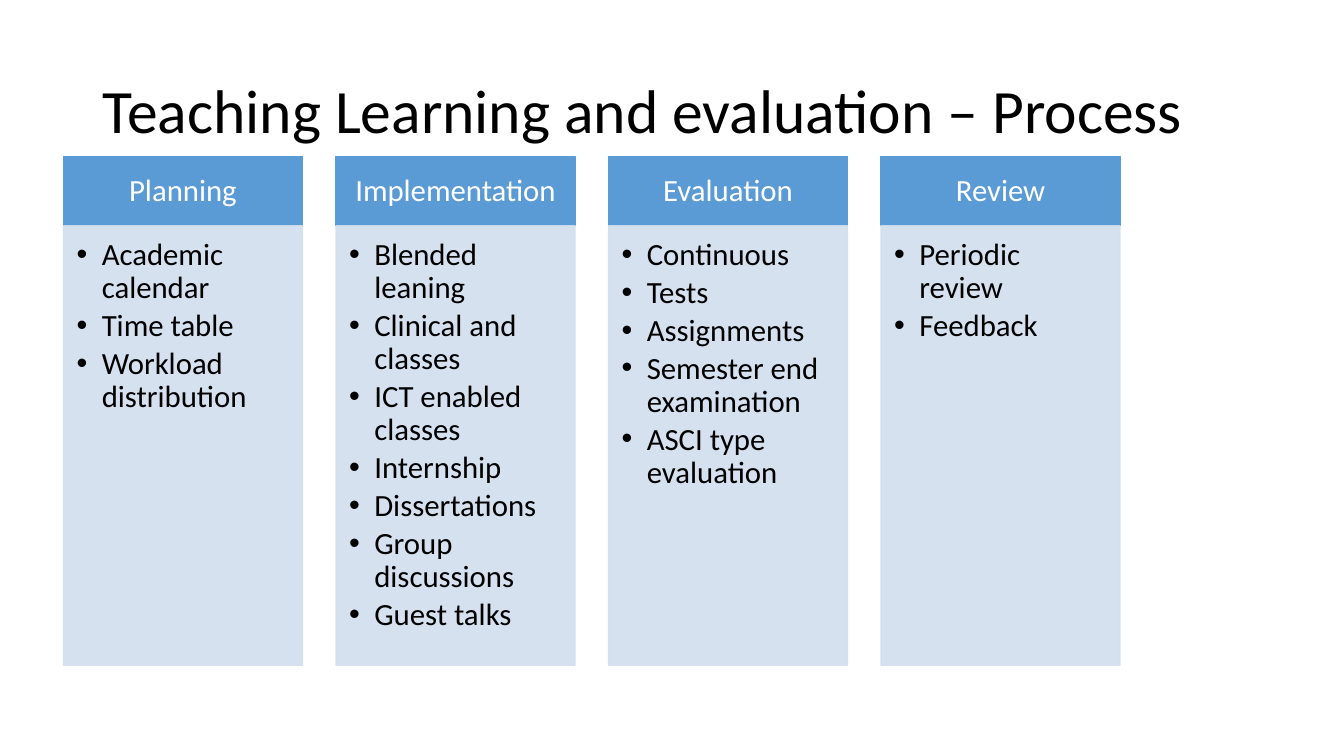
from dataclasses import dataclass

from lxml import etree
from pptx import Presentation
from pptx.dml.color import RGBColor
from pptx.enum.shapes import MSO_SHAPE
from pptx.enum.text import MSO_ANCHOR, PP_ALIGN
from pptx.oxml.ns import qn
from pptx.util import Inches, Pt

RECT = MSO_SHAPE.RECTANGLE
TOP, MIDDLE = MSO_ANCHOR.TOP, MSO_ANCHOR.MIDDLE
LEFT, CENTER = PP_ALIGN.LEFT, PP_ALIGN.CENTER


@dataclass(frozen=True)
class Theme:
    font: str = "Calibri"
    title_size: int = 44
    body_size: int = 22
    text: str = "000000"
    header_text: str = "FFFFFF"
    header_fill: str = "5B9BD5"
    body_fill: str = "D2DEEF"
    body_opacity: int = 90


@dataclass(frozen=True)
class Stage:
    name: str
    items: tuple[str, ...]


THEME = Theme()
TITLE = "Teaching Learning and evaluation – Process"
STAGES = (
    Stage("Planning", ("Academic calendar", "Time table", "Workload distribution")),
    Stage("Implementation", (
        "Blended leaning", "Clinical and classes", "ICT enabled classes", "Internship",
        "Dissertations", "Group discussions", "Guest talks",
    )),
    Stage("Evaluation", (
        "Continuous", "Tests", "Assignments", "Semester end examination",
        "ASCI type evaluation",
    )),
    Stage("Review", ("Periodic review", "Feedback")),
)
COLUMN_LEFT, COLUMN_PITCH, COLUMN_WIDTH = 0.63, 2.703, 2.37
HEADER_TOP, HEADER_HEIGHT, BODY_HEIGHT = 1.55, 0.69, 4.36


def set_frame(tf, anchor, insets: tuple[float, float, float, float]) -> None:
    tf.word_wrap = True
    tf.vertical_anchor = anchor
    left, top, right, bottom = map(Inches, insets)
    tf.margin_left, tf.margin_top = left, top
    tf.margin_right, tf.margin_bottom = right, bottom


def write(p, text: str, size: int, color: str, align=LEFT) -> None:
    p.alignment = align
    p.line_spacing = 0.9
    r = p.add_run()
    r.text = text
    r.font.name = THEME.font
    r.font.size = Pt(size)
    r.font.color.rgb = RGBColor.from_string(color)


def add_bullet(p) -> None:
    p.level = 1
    p.space_after = Pt(3.3)
    pPr = p._p.get_or_add_pPr()
    pPr.set("marL", str(Inches(0.25)))
    pPr.set("indent", str(-Inches(0.25)))
    etree.SubElement(pPr, qn("a:buFont"), typeface="Arial")
    etree.SubElement(pPr, qn("a:buChar"), char="•")


def add_box(slide, left: float, top: float, height: float, color: str, opacity: int = 100):
    sp = slide.shapes.add_shape(
        RECT, Inches(left), Inches(top), Inches(COLUMN_WIDTH), Inches(height))
    sp.shadow.inherit = False
    sp.fill.solid()
    sp.fill.fore_color.rgb = RGBColor.from_string(color)
    sp.line.color.rgb = RGBColor.from_string(color)
    sp.line.width = Pt(1)
    if opacity < 100:
        for clr in sp._element.spPr.iter(qn("a:srgbClr")):
            etree.SubElement(clr, qn("a:alpha"), val=str(opacity * 1000))
    return sp


def add_stage(slide, stage: Stage, left: float) -> None:
    header = add_box(slide, left, HEADER_TOP, HEADER_HEIGHT, THEME.header_fill)
    tf = header.text_frame
    set_frame(tf, MIDDLE, (0.17, 0.1, 0.17, 0.1))
    write(tf.paragraphs[0], stage.name, THEME.body_size, THEME.header_text, CENTER)

    body = add_box(slide, left, HEADER_TOP + HEADER_HEIGHT, BODY_HEIGHT,
                   THEME.body_fill, THEME.body_opacity)
    tf = body.text_frame
    set_frame(tf, TOP, (0.13, 0.13, 0.17, 0.19))
    for i, item in enumerate(stage.items):
        p = tf.add_paragraph() if i else tf.paragraphs[0]
        write(p, item, THEME.body_size, THEME.text)
        add_bullet(p)


def add_title(slide) -> None:
    box = slide.shapes.add_textbox(Inches(0.92), Inches(0.4), Inches(11.5), Inches(1.45))
    set_frame(box.text_frame, MIDDLE, (0.1, 0.05, 0.1, 0.05))
    write(box.text_frame.paragraphs[0], TITLE, THEME.title_size, THEME.text)


def main() -> None:
    """Build the teaching process slide and save it."""
    prs = Presentation()
    prs.slide_width, prs.slide_height = Inches(13.33), Inches(7.5)
    slide = prs.slides.add_slide(prs.slide_layouts[6])
    add_title(slide)
    for i, stage in enumerate(STAGES):
        add_stage(slide, stage, COLUMN_LEFT + i * COLUMN_PITCH)
    prs.save("out.pptx")


if __name__ == "__main__":
    main()
